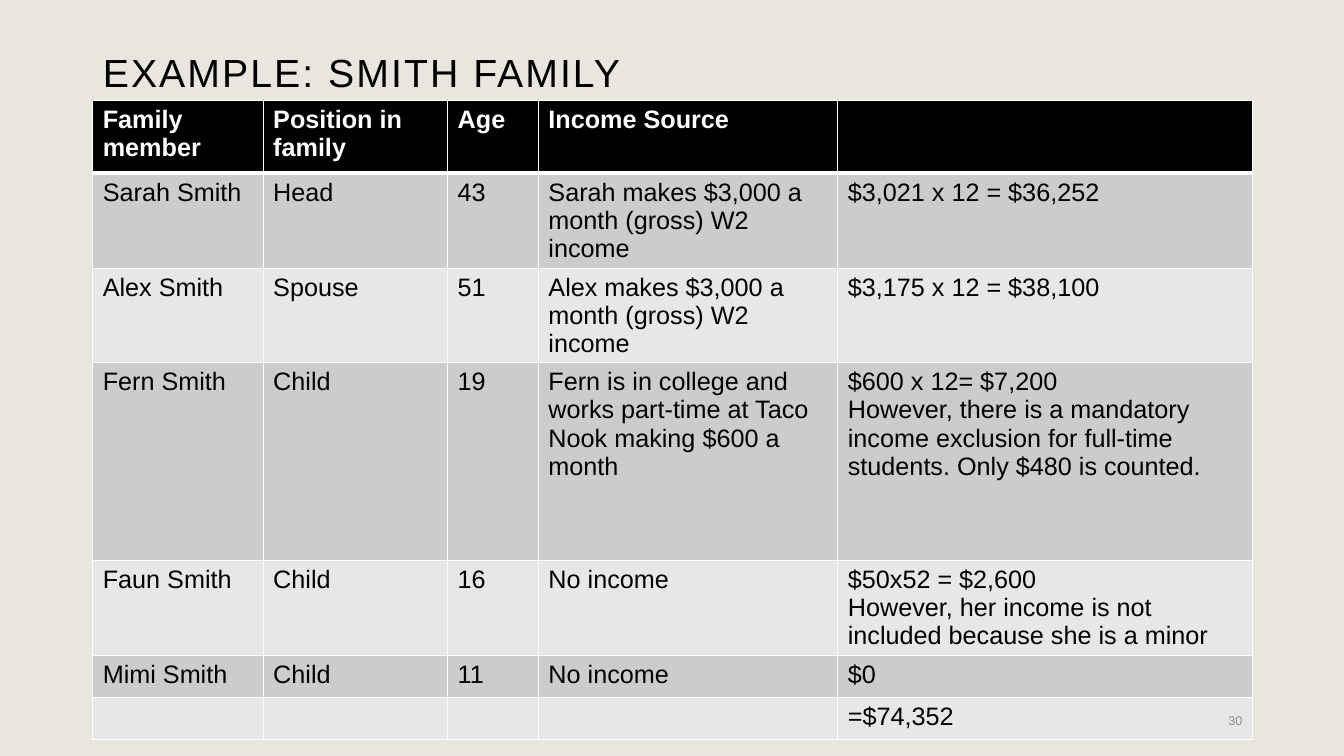
from lxml.etree import SubElement
from pptx import Presentation
from pptx.dml.color import RGBColor
from pptx.enum.text import MSO_ANCHOR, MSO_AUTO_SIZE, PP_ALIGN
from pptx.oxml.ns import qn
from pptx.util import Inches, Pt

COLORS = {"background": "E9E6DF", "black": "000000", "white": "FFFFFF",
          "odd": "CCCCCC", "even": "E7E7E7", "number": "8C8C8C"}
FONT = "Arial"
COL_WIDTHS = [1.69, 1.83, 0.9, 2.97, 4.11]
ROW_HEIGHTS = [0.72, 0.72, 0.72, 1.96, 0.42, 0.42, 0.42]
ROWS = [
    ["Family member", "Position in family", "Age", "Income Source", ""],
    ["Sarah Smith", "Head", "43", "Sarah makes $3,000 a month (gross) W2 income",
     "$3,021 x 12 = $36,252"],
    ["Alex Smith", "Spouse", "51", "Alex makes $3,000 a month (gross) W2 income",
     "$3,175 x 12 = $38,100"],
    ["Fern Smith", "Child", "19",
     "Fern is in college and works part-time at Taco Nook making $600 a month",
     "$600 x 12= $7,200\nHowever, there is a mandatory income exclusion for "
     "full-time students. Only $480 is counted."],
    ["Faun Smith", "Child", "16", "No income",
     "$50x52 = $2,600\nHowever, her income is not included because she is a minor"],
    ["Mimi Smith", "Child", "11", "No income", "$0"],
    ["", "", "", "", "=$74,352"],
]


def rgb(name):
    return RGBColor.from_string(COLORS[name])


def style_text(tf, size, color, bold=False):
    for p in tf.paragraphs:
        p.font.name = FONT
        p.font.size = Pt(size)
        p.font.bold = bold
        p.font.color.rgb = rgb(color)


def place(shape, box):
    shape.left, shape.top, shape.width, shape.height = map(Inches, box)


def add_title(s, box, text):
    title = s.shapes.title
    place(title, box)
    tf = title.text_frame
    tf.text = text
    tf.auto_size = MSO_AUTO_SIZE.NONE
    tf.vertical_anchor = MSO_ANCHOR.BOTTOM
    style_text(tf, 28, "black")
    p = tf.paragraphs[0]
    p.alignment = PP_ALIGN.LEFT
    p.line_spacing = 0.9
    p.runs[0].font._element.set("spc", "150")


def set_borders(cell, widths):
    """Draw white borders; widths maps each side (L, R, T, B) to points."""
    tcPr = cell._tc.get_or_add_tcPr()
    for side, width in widths.items():
        ln = SubElement(tcPr, qn(f"a:ln{side}"), w=str(Pt(width)))
        fill = SubElement(ln, qn("a:solidFill"))
        SubElement(fill, qn("a:srgbClr"), val=COLORS["white"])


def add_income_table(s, box):
    table = s.shapes.add_table(len(ROWS), len(COL_WIDTHS), *map(Inches, box)).table
    for column, width in zip(table.columns, COL_WIDTHS):
        column.width = Inches(width)
    for i, (row, height) in enumerate(zip(table.rows, ROW_HEIGHTS)):
        row.height = Inches(height)
        header = i == 0
        fill = "black" if header else "odd" if i % 2 else "even"
        for cell, text in zip(row.cells, ROWS[i]):
            cell.text = text
            style_text(cell.text_frame, 18, "white" if header else "black", header)
            set_borders(cell, {"L": 1, "R": 1, "T": 3 if i == 1 else 1,
                               "B": 3 if header else 1})
            cell.fill.solid()
            cell.fill.fore_color.rgb = rgb(fill)


def add_slide_number(s, box, number):
    tf = s.shapes.add_textbox(*map(Inches, box)).text_frame
    tf.word_wrap = True
    tf.vertical_anchor = MSO_ANCHOR.MIDDLE
    tf.text = number
    tf.paragraphs[0].alignment = PP_ALIGN.RIGHT
    style_text(tf, 9, "number")


def main():
    prs = Presentation()
    prs.slide_width, prs.slide_height = Inches(13.33), Inches(7.5)
    s = prs.slides.add_slide(prs.slide_layouts[5])
    s.background.fill.solid()
    s.background.fill.fore_color.rgb = rgb("background")
    add_title(s, (0.92, 0.37, 6.18, 0.63), "EXAMPLE: SMITH FAMILY")
    add_income_table(s, (0.92, 1, 11.5, 5.96))
    add_slide_number(s, (9.42, 6.95, 3, 0.4), "30")
    prs.save("out.pptx")


if __name__ == "__main__":
    main()
